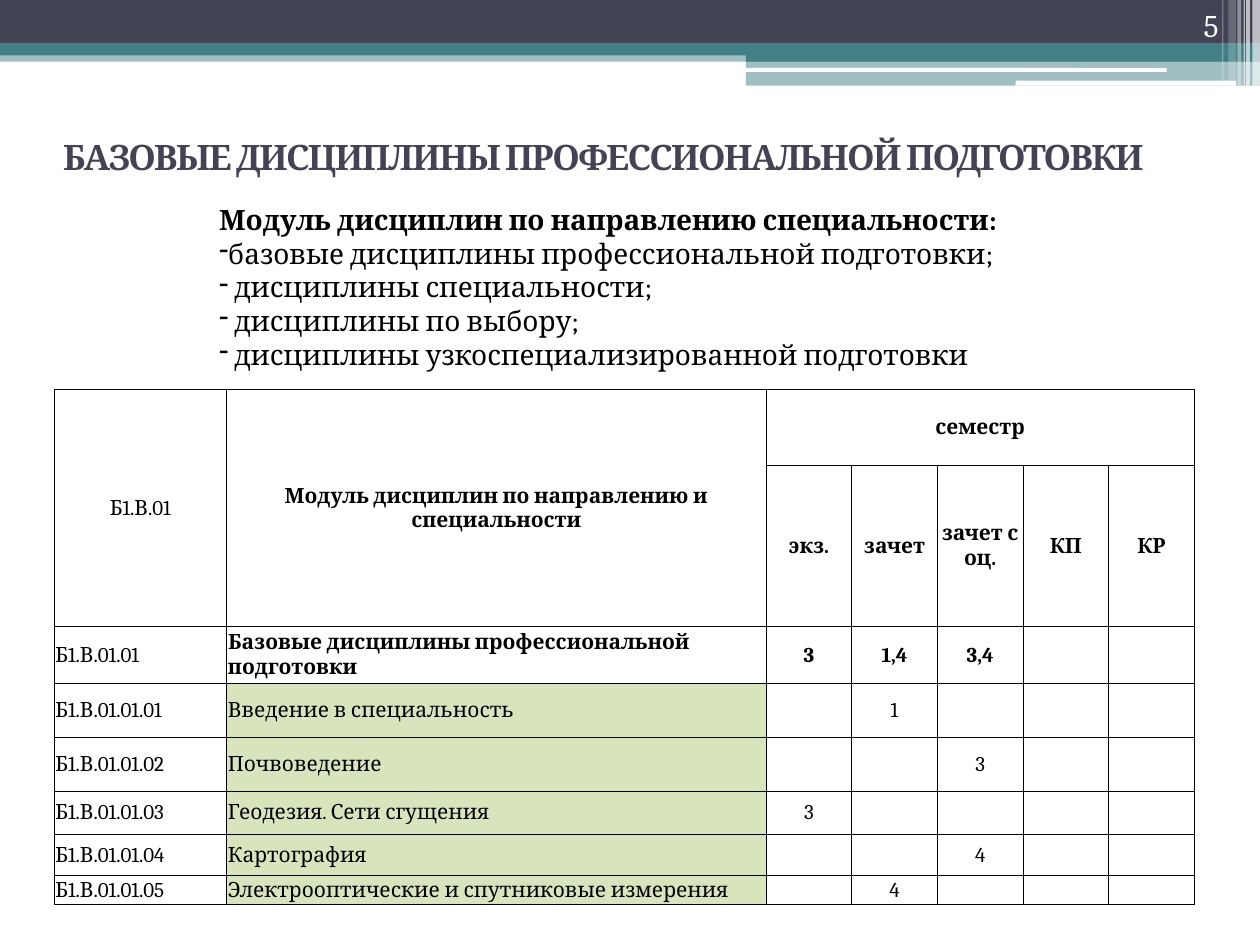
"""Builds a slide with a striped header, a module list and a course table."""
import dataclasses
import lxml.etree
import pptx
import pptx.dml.color
import pptx.enum.shapes
import pptx.enum.text
import pptx.oxml.ns
import pptx.util

WIDE = pptx.util.Inches(10)
HIGH = pptx.util.Inches(7.5)
FONT = "Cambria"
HUES = {"dark": "424456", "teal": "438086", "white": "FFFFFF",
        "black": "000000", "green": "D7E4BC"}
KINDS = pptx.enum.shapes.MSO_SHAPE
ALIGN = pptx.enum.text.PP_ALIGN
ANCHOR = pptx.enum.text.MSO_ANCHOR


@dataclasses.dataclass
class Box:
    """Place and size in percent of the slide."""
    left: float
    top: float
    width: float
    height: float

    def place(self) -> tuple:
        return (across(self.left), down(self.top),
                across(self.width), down(self.height))


@dataclasses.dataclass
class Bar:
    """One plain stripe of the header."""
    box: Box
    hue: str
    solid: int = 100
    kind: int = KINDS.RECTANGLE


@dataclasses.dataclass
class Course:
    """One table row; marks maps a column to its term."""
    code: str
    name: str
    marks: dict
    bold: bool = False
    hue: str = "green"


ROUND = KINDS.ROUNDED_RECTANGLE
BARS = [
    Bar(Box(0, 5.33, 100, 1.2), "teal", 50),
    Bar(Box(0, 0, 100, 4.53), "dark"),
    Bar(Box(0, 4.53, 100, 1.33), "teal"),
    Bar(Box(59.2, 5.2, 40.8, 1.33), "teal"),
    Bar(Box(59.2, 6.4, 40.8, 2.67), "teal", 50),
    Bar(Box(59.1, 7.2, 33.5, 0.4), "white", kind=ROUND),
    Bar(Box(80.6, 8.53, 17.5, 0.53), "white", kind=ROUND),
] + [Bar(Box(left, 0, width, height), "white", solid)
     for left, width, height, solid in [
         (99.4, 0.6, 9.07, 65), (98.9, 0.3, 9.07, 65), (98.7, 0.1, 9.07, 60),
         (98.2, 0.3, 9.07, 40), (97.5, 0.6, 8.53, 20), (97, 0.1, 8.53, 30)]]

TITLE = "БАЗОВЫЕ ДИСЦИПЛИНЫ ПРОФЕССИОНАЛЬНОЙ ПОДГОТОВКИ"
LEAD = "Модуль дисциплин по направлению специальности:"
ITEMS = ["базовые дисциплины профессиональной подготовки;",
         " дисциплины специальности;",
         " дисциплины по выбору;",
         " дисциплины узкоспециализированной подготовки"]

COLS = [13.7, 42.8] + [6.8] * 5
ROWS = [8, 17.07, 6, 5.73, 5.73, 4.53, 4.4, 3.07]
HEADS = ["экз.", "зачет", "зачет с оц.", "КП", "КР"]
TOPS = ["Б1.В.01", "Модуль дисциплин по направлению и специальности", "семестр"]
BASE = "Б1.В.01.01"
COURSES = [
    Course(BASE, "Базовые дисциплины профессиональной подготовки",
           {2: "3", 3: "1,4", 4: "3,4"}, True, "white"),
] + [Course(f"{BASE}.{num:02}", name, marks) for num, (name, marks) in enumerate([
    ("Введение в специальность", {3: "1"}),
    ("Почвоведение", {4: "3"}),
    ("Геодезия. Сети сгущения", {2: "3"}),
    ("Картография", {4: "4"}),
    ("Электрооптические и спутниковые измерения", {3: "4"})], 1)]


def across(share: float) -> int:
    return round(WIDE * share / 100)


def down(share: float) -> int:
    return round(HIGH * share / 100)


def tint(hue: str):
    return pptx.dml.color.RGBColor.from_string(HUES[hue])


def add(node, tag: str, **attrs):
    return lxml.etree.SubElement(node, pptx.oxml.ns.qn(tag), attrs)


def write(para, text: str, size=12, hue="black", bold=False,
          align=ALIGN.LEFT, space=0, mark=""):
    """Fill one paragraph with formatted text."""
    para.alignment = align
    if mark:
        add(para._p.get_or_add_pPr(), "a:buChar", char=mark)
    if not text:
        add(para._p, "a:endParaRPr", sz=str(size * 100))
        return
    run = para.add_run()
    run.text = text
    run.font.size = pptx.util.Pt(size)
    run.font.name = FONT
    run.font.bold = bold
    run.font.color.rgb = tint(hue)
    if space:
        run.font._element.set("spc", str(space * 100))


def draw_bar(slide, bar: Bar):
    shape = slide.shapes.add_shape(bar.kind, *bar.box.place())
    shape.shadow.inherit = False
    shape.fill.solid()
    shape.fill.fore_color.rgb = tint(bar.hue)
    shape.line.fill.background()
    if bar.solid < 100:
        tone = shape._element.find(".//" + pptx.oxml.ns.qn("a:srgbClr"))
        add(tone, "a:alpha", val=str(bar.solid * 1000))


def add_frame(slide, box: Box, anchor=ANCHOR.TOP):
    frame = slide.shapes.add_textbox(*box.place()).text_frame
    frame.word_wrap = True
    frame.vertical_anchor = anchor
    return frame


def style_cell(cell, hue: str):
    cell.vertical_anchor = ANCHOR.MIDDLE
    cell.margin_left = cell.margin_right = cell.margin_top = across(0.1)
    cell.margin_bottom = 0
    props = cell._tc.get_or_add_tcPr()
    for side in "LRTB":
        line = add(props, f"a:ln{side}", w=str(pptx.util.Pt(0.5)))
        add(add(line, "a:solidFill"), "a:srgbClr", val=HUES["black"])
    cell.fill.solid()
    cell.fill.fore_color.rgb = tint(hue)


def draw_table(slide):
    box = Box(4.3, 41.2, sum(COLS), sum(ROWS))
    table = slide.shapes.add_table(len(ROWS), len(COLS), *box.place()).table
    table.first_row = table.horz_banding = False
    for col, share in zip(table.columns, COLS):
        col.width = across(share)
    for row, share in zip(table.rows, ROWS):
        row.height = down(share)

    def put(row: int, col: int, text: str, hue="white", **form):
        cell = table.cell(row, col)
        style_cell(cell, hue)
        write(cell.text_frame.paragraphs[0], text, **form)

    mid = ALIGN.CENTER
    for row, texts in enumerate([TOPS + [""] * 4, ["", ""] + HEADS]):
        for col, text in enumerate(texts):
            put(row, col, text, bold=col > 0, align=mid)
    for row, course in enumerate(COURSES, 2):
        put(row, 0, course.code)
        put(row, 1, course.name, course.hue, bold=course.bold)
        for col in range(2, len(COLS)):
            put(row, col, course.marks.get(col, ""), bold=course.bold, align=mid)
    for start, end in [((0, 0), (1, 0)), ((0, 1), (1, 1)), ((0, 2), (0, 6))]:
        table.cell(*start).merge(table.cell(*end))


def main():
    deck = pptx.Presentation()
    deck.slide_width, deck.slide_height = WIDE, HIGH
    slide = deck.slides.add_slide(deck.slide_layouts[6])
    for bar in BARS:
        draw_bar(slide, bar)
    head = add_frame(slide, Box(1.6, 10.53, 92.5, 12.13), ANCHOR.MIDDLE)
    write(head.paragraphs[0], TITLE, size=20, hue="dark", bold=True,
          align=ALIGN.CENTER, space=-1)
    page = add_frame(slide, Box(89.4, 0, 8.3, 5.33), ANCHOR.BOTTOM)
    write(page.paragraphs[0], "5", size=18, hue="white", align=ALIGN.RIGHT)
    draw_table(slide)
    body = add_frame(slide, Box(16.4, 20.8, 65.6, 19.33))
    write(body.paragraphs[0], LEAD, size=16, bold=True)
    for item in ITEMS:
        write(body.add_paragraph(), item, size=16, mark="-")
    deck.save("out.pptx")


if __name__ == "__main__":
    main()
